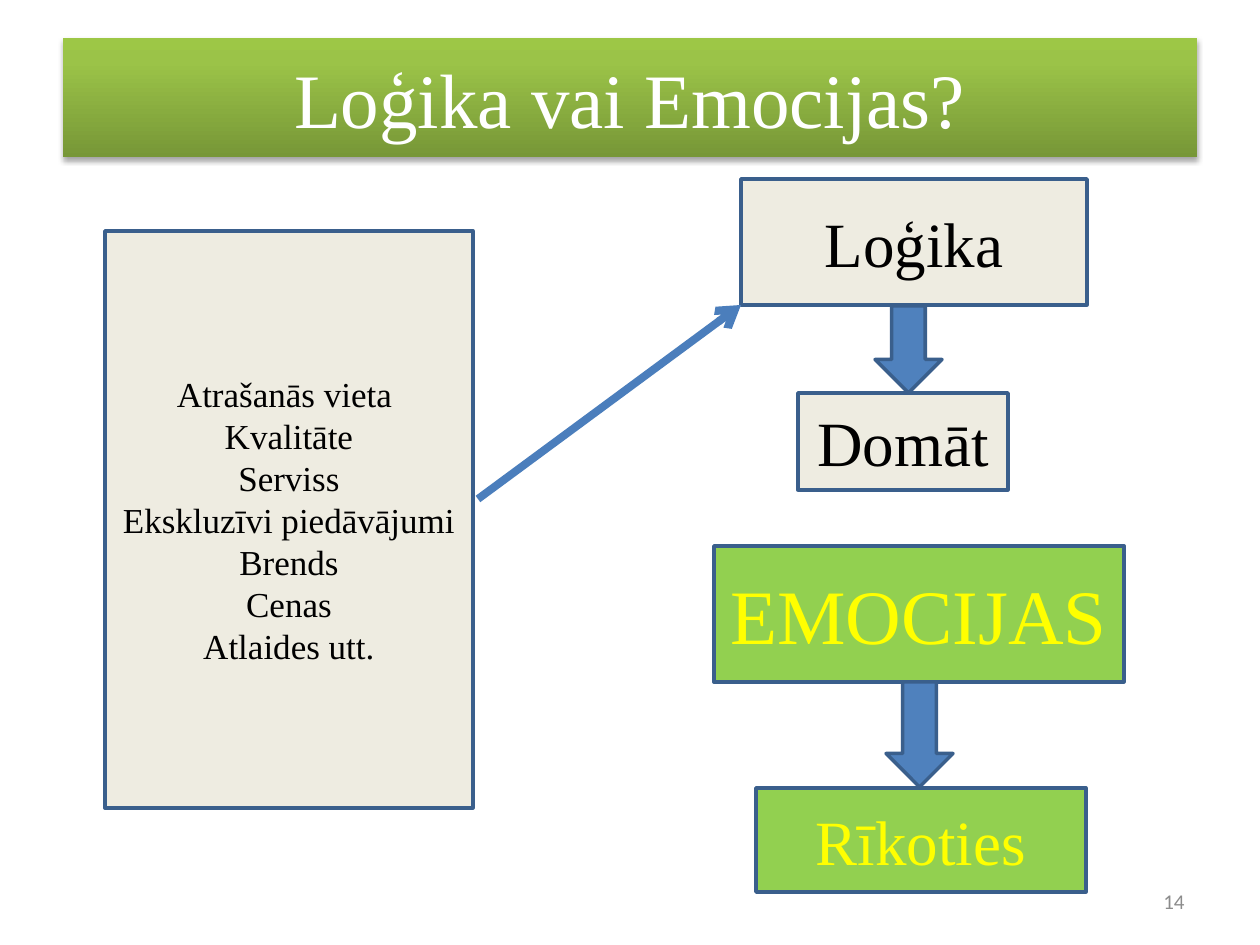
import pptx
import pptx.util
import pptx.oxml
import pptx.oxml.ns
import pptx.dml.color
import pptx.enum.shapes
import pptx.enum.text

RGBColor = pptx.dml.color.RGBColor
Shape = pptx.enum.shapes.MSO_SHAPE
Align = pptx.enum.text.PP_ALIGN
Anchor = pptx.enum.text.MSO_ANCHOR

EMU_PER_PIXEL = 914400 / 126
SERIF = "Times New Roman"
WHITE = RGBColor(0xFF, 0xFF, 0xFF)
BLACK = RGBColor(0x00, 0x00, 0x00)
GRAY = RGBColor(0x8C, 0x8C, 0x8C)
BEIGE = RGBColor(0xEE, 0xEC, 0xE1)
GREEN = RGBColor(0x92, 0xD0, 0x50)
YELLOW = RGBColor(0xFF, 0xFF, 0x00)
BLUE = RGBColor(0x4F, 0x81, 0xBD)
OUTLINE_BLUE = RGBColor(0x3A, 0x5F, 0x8C)
CONNECTOR_BLUE = RGBColor(0x4B, 0x7E, 0xBC)
TITLE_GRADIENT = [
    (0, RGBColor(0x77, 0x97, 0x37)),
    (80, RGBColor(0x9B, 0xC3, 0x48)),
    (100, RGBColor(0x9D, 0xC7, 0x46)),
]

REASONS = [
    "Atrašanās vieta ",
    "Kvalitāte",
    "Serviss",
    "Ekskluzīvi piedāvājumi",
    "Brends",
    "Cenas",
    "Atlaides utt.",
]
BOXES = [
    ((105, 231, 368, 577), REASONS, 20, BEIGE, BLACK),
    ((741, 179, 346, 126), ["Loģika"], 36, BEIGE, BLACK),
    ((798, 393, 210, 97), ["Domāt"], 36, BEIGE, BLACK),
    ((714, 546, 410, 136), ["EMOCIJAS"], 44, GREEN, YELLOW),
    ((756, 788, 330, 104), ["Rīkoties"], 36, GREEN, YELLOW),
]
DOWN_ARROWS = [(875, 306, 67, 87), (886, 682, 67, 105)]


def px(length):
    return pptx.util.Emu(round(length * EMU_PER_PIXEL))


def set_attributes(target, values):
    for name, value in values.items():
        setattr(target, name, value)


def add_xml(parent, content):
    namespace = pptx.oxml.ns.nsdecls("a")
    tag, rest = content[1:].split(" ", 1)
    parent.append(pptx.oxml.parse_xml(f"<{tag} {namespace} {rest}"))


def place(shape, bounds):
    names = ("left", "top", "width", "height")
    set_attributes(shape, dict(zip(names, map(px, bounds))))


def write_text(shape, lines, size, color, font=SERIF, alignment=Align.CENTER):
    frame = shape.text_frame
    frame.text = "\n".join(lines)
    set_attributes(frame, {"word_wrap": True, "vertical_anchor": Anchor.MIDDLE})
    for paragraph in frame.paragraphs:
        paragraph.alignment = alignment
        run_font = paragraph.runs[0].font
        set_attributes(run_font, {"name": font, "size": pptx.util.Pt(size)})
        run_font.color.rgb = color


def format_title(title):
    place(title, (63, 38, 1134, 119))
    write_text(title, ["Loģika vai Emocijas?"], 44, WHITE)
    properties = title._element.spPr
    stops = "".join(
        f'<a:gs pos="{position * 1000}"><a:srgbClr val="{color}"/></a:gs>'
        for position, color in TITLE_GRADIENT
    )
    add_xml(
        properties,
        f'<a:gradFill rotWithShape="1"><a:gsLst>{stops}</a:gsLst>'
        '<a:lin ang="16200000" scaled="0"/></a:gradFill>',
    )
    add_xml(
        properties,
        '<a:effectLst ><a:outerShdw blurRad="40000" dist="23000" dir="5400000" '
        'rotWithShape="0"><a:srgbClr val="000000"><a:alpha val="35000"/>'
        "</a:srgbClr></a:outerShdw></a:effectLst>",
    )


def add_outlined_shape(slide, kind, bounds, fill):
    shape = slide.shapes.add_shape(kind, *map(px, bounds))
    shape.shadow.inherit = False
    shape.fill.solid()
    shape.fill.fore_color.rgb = fill
    shape.line.color.rgb = OUTLINE_BLUE
    shape.line.width = pptx.util.Pt(2)
    return shape


def add_arrow_line(slide, start, end):
    connector = slide.shapes.add_connector(
        pptx.enum.shapes.MSO_CONNECTOR.STRAIGHT, *map(px, start + end)
    )
    connector.line.color.rgb = CONNECTOR_BLUE
    connector.line.width = pptx.util.Pt(4.5)
    add_xml(connector.line._get_or_add_ln(), '<a:tailEnd type="arrow"/>')
    add_xml(connector._element.spPr, "<a:effectLst />")


def add_page_number(slide):
    text_box = slide.shapes.add_textbox(*map(px, (903, 876, 294, 50)))
    write_text(text_box, ["14"], 12, GRAY, "Calibri", Align.RIGHT)


def main():
    presentation = pptx.Presentation()
    set_attributes(presentation, {"slide_width": px(1260), "slide_height": px(945)})
    slide = presentation.slides.add_slide(presentation.slide_layouts[5])
    format_title(slide.shapes.title)
    for bounds, lines, size, fill, color in BOXES:
        box = add_outlined_shape(slide, Shape.RECTANGLE, bounds, fill)
        write_text(box, lines, size, color)
    add_arrow_line(slide, (478, 499), (741, 305))
    for bounds in DOWN_ARROWS:
        add_outlined_shape(slide, Shape.DOWN_ARROW, bounds, BLUE)
    add_page_number(slide)
    presentation.save("out.pptx")


if __name__ == "__main__":
    main()
